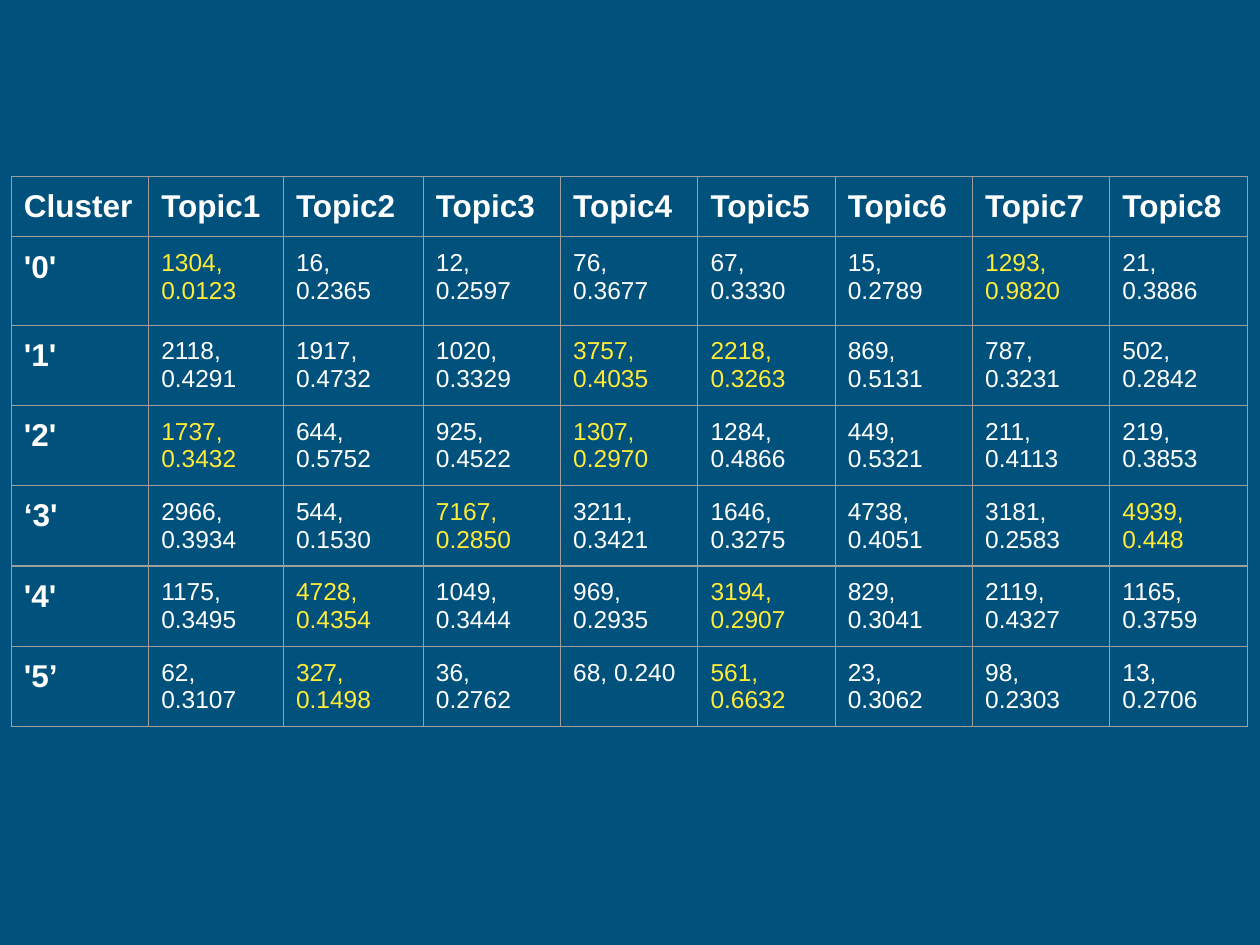
from lxml.etree import SubElement
from pptx import Presentation
from pptx.dml.color import RGBColor as RGB
from pptx.oxml.ns import qn
from pptx.util import Inches, Pt

COLORS = {"bg": "00517C", "text": "FFFFFF", "mark": "FFEB38", "border": "9E9E9E"}
FONT = "Arial"
SLIDE_W, SLIDE_H = 10, 7.5
LEFT, TOP = 0.09, 1.4
COL_W, ROW_H, MARGIN = 1.09, 0.63, 0.1
COL_EXCEPTIONS = {1: 1.07, 2: 1.11}
ROW_EXCEPTIONS = {0: 0.48, 1: 0.7}

HEADER = ["Cluster"] + [f"Topic{n}" for n in range(1, 9)]
# Cluster label, then count and score per topic
CLUSTERS = [
    ["'0'", "1304,\n0.0123", "16, 0.2365", "12, 0.2597", "76, 0.3677",
     "67, 0.3330", "15, 0.2789", "1293, 0.9820", "21, 0.3886"],
    ["'1'", "2118, 0.4291", "1917, 0.4732", "1020, 0.3329", "3757, 0.4035",
     "2218, 0.3263", "869, 0.5131", "787, 0.3231", "502, 0.2842"],
    ["'2'", "1737, 0.3432", "644, 0.5752", "925, 0.4522", "1307, 0.2970",
     "1284, 0.4866", "449, 0.5321", "211, 0.4113", "219, 0.3853"],
    ["‘3'", "2966, 0.3934", "544, 0.1530", "7167, 0.2850", "3211, 0.3421",
     "1646, 0.3275", "4738, 0.4051", "3181, 0.2583", "4939, 0.448"],
    ["'4'", "1175, 0.3495", "4728, 0.4354", "1049, 0.3444", "969, 0.2935",
     "3194, 0.2907", "829, 0.3041", "2119, 0.4327", "1165, 0.3759"],
    ["'5’", "62, 0.3107", "327, 0.1498", "36, 0.2762", "68, 0.240",
     "561, 0.6632", "23, 0.3062", "98, 0.2303", "13, 0.2706"],
]
# Highlighted topics in each table row
MARKED = {1: (1, 7), 2: (4, 5), 3: (1, 4), 4: (3, 8), 5: (2, 5), 6: (2, 5)}


def set_borders(cell):
    tc_pr = cell._tc.get_or_add_tcPr()
    for side in ("a:lnL", "a:lnR", "a:lnT", "a:lnB"):
        ln = SubElement(tc_pr, qn(side), w=str(Pt(0.75)))
        fill = SubElement(ln, qn("a:solidFill"))
        SubElement(fill, qn("a:srgbClr"), val=COLORS["border"])


def fill_cell(cell, text, size, color, bold):
    set_borders(cell)
    cell.fill.background()
    cell.margin_left = cell.margin_right = Inches(MARGIN)
    cell.margin_top = cell.margin_bottom = Inches(MARGIN)
    cell.text_frame.text = text
    for p in cell.text_frame.paragraphs:
        for r in p.runs:
            r.font.name = FONT
            r.font.size = Pt(size)
            r.font.bold = bold
            r.font.color.rgb = RGB.from_string(COLORS[color])


def add_topic_table(slide, rows):
    widths = [COL_EXCEPTIONS.get(c, COL_W) for c in range(len(rows[0]))]
    heights = [ROW_EXCEPTIONS.get(r, ROW_H) for r in range(len(rows))]
    table = slide.shapes.add_table(
        len(rows), len(widths), Inches(LEFT), Inches(TOP),
        Inches(sum(widths)), Inches(sum(heights))).table
    table.first_row = table.horz_banding = False
    for col, width in zip(table.columns, widths):
        col.width = Inches(width)
    for row, height in zip(table.rows, heights):
        row.height = Inches(height)
    for i, row in enumerate(rows):
        for j, text in enumerate(row):
            heading = i == 0 or j == 0
            color = "mark" if j in MARKED.get(i, ()) else "text"
            fill_cell(table.cell(i, j), text, 18 if heading else 14, color, heading)


def main():
    prs = Presentation()
    prs.slide_width, prs.slide_height = Inches(SLIDE_W), Inches(SLIDE_H)
    slide = prs.slides.add_slide(prs.slide_layouts[6])

    # Background
    bg = slide.background.fill
    bg.solid()
    bg.fore_color.rgb = RGB.from_string(COLORS["bg"])

    # Topics by cluster
    add_topic_table(slide, [HEADER] + CLUSTERS)
    prs.save("out.pptx")


if __name__ == "__main__":
    main()
